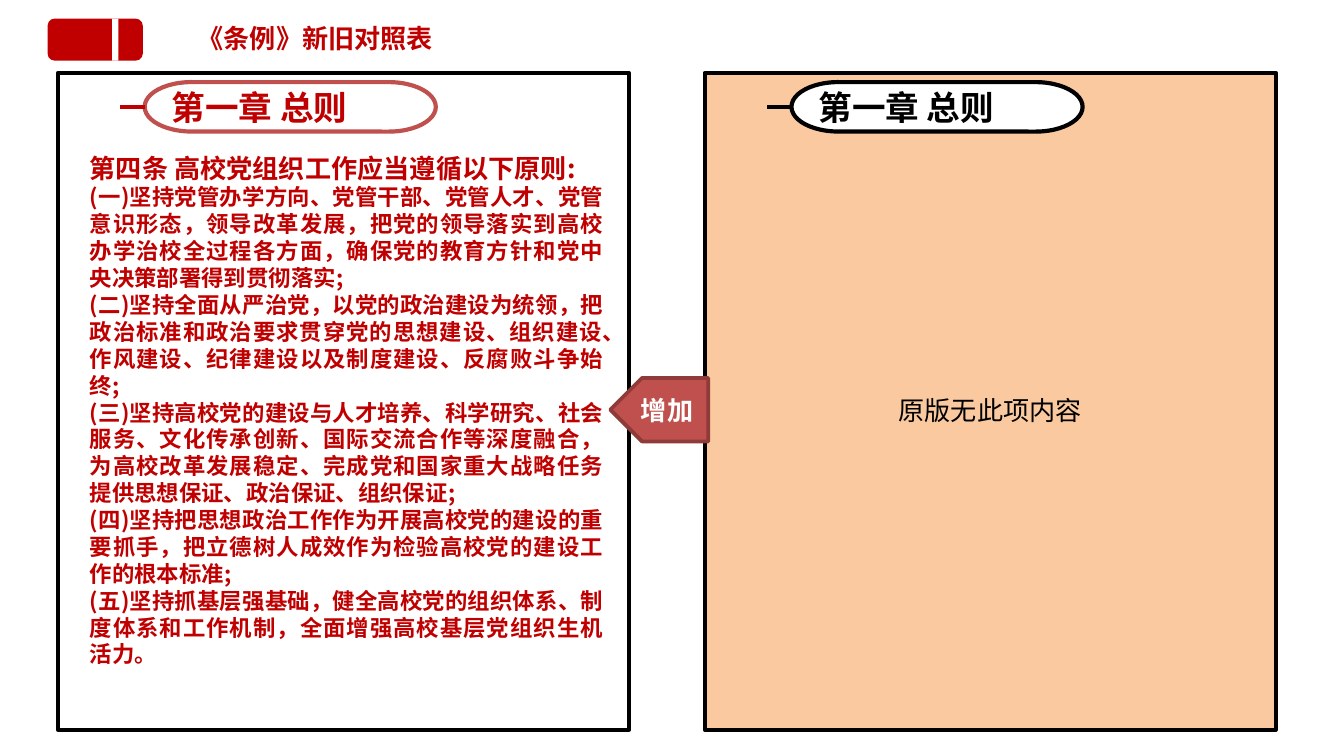
import lxml.etree
import pptx
import pptx.dml.color
import pptx.enum.shapes
import pptx.enum.text
import pptx.oxml.ns
import pptx.util

Pt = pptx.util.Pt
qn = pptx.oxml.ns.qn
SHAPE = pptx.enum.shapes.MSO_SHAPE
ALIGN = pptx.enum.text.PP_ALIGN
ANCHOR = pptx.enum.text.MSO_ANCHOR

COLORS = {"red": "C00000", "white": "FFFFFF", "black": "000000",
          "orange": "FAC090", "brick": "C0504D", "dark_brick": "8E3B39"}


class Deck:
    """Holds the style and the current slide."""
    font = "Noto Sans CJK SC"

    def __init__(self, slide):
        self.s = slide

    def rgb(self, name):
        return pptx.dml.color.RGBColor.from_string(COLORS[name])

    def shape(self, kind, x, y, w, h, fill, line=None, width=2, alpha=None):
        sp = self.s.shapes.add_shape(kind, Pt(x), Pt(y), Pt(w), Pt(h))
        sp.shadow.inherit = False
        sp.fill.solid()
        sp.fill.fore_color.rgb = self.rgb(fill)
        if alpha:
            clr = sp._element.spPr.find(qn("a:solidFill"))[0]
            lxml.etree.SubElement(clr, qn("a:alpha")).set("val", str(alpha * 1000))
        if line:
            sp.line.color.rgb = self.rgb(line)
            sp.line.width = Pt(width)
        else:
            sp.line.fill.background()
        return sp

    def set_text(self, sp, lines, sizes, color, bold=True, align=ALIGN.CENTER):
        tf = sp.text_frame
        tf.text = "\n".join(lines)
        for p, size in zip(tf.paragraphs, sizes):
            p.alignment = align
            for r in p.runs:
                r.font.name = self.font
                r.font.size = Pt(size)
                r.font.bold = bold
                r.font.color.rgb = self.rgb(color)
                ea = lxml.etree.SubElement(r._r.get_or_add_rPr(), qn("a:ea"))
                ea.set("typeface", self.font)

    def text(self, x, y, w, h, lines, sizes, color, wrap=True, **style):
        sp = self.s.shapes.add_textbox(Pt(x), Pt(y), Pt(w), Pt(h))
        sp.text_frame.word_wrap = wrap
        sp.text_frame.auto_size = pptx.enum.text.MSO_AUTO_SIZE.SHAPE_TO_FIT_TEXT
        self.set_text(sp, lines, sizes, color, **style)

    def label(self, sp, text, size, color, align=ALIGN.CENTER):
        sp.text_frame.vertical_anchor = ANCHOR.MIDDLE
        self.set_text(sp, [text], [size], color, align=align)

    def chapter(self, x, y, title, outline, color):
        w, h, stem = 156, 26.5, 13
        tag = self.shape(SHAPE.FLOWCHART_TERMINATOR, x, y, w, h, "white", outline, 2.25)
        self.label(tag, title, 18, color, ALIGN.LEFT)
        mid = Pt(y + h / 2)
        c = self.s.shapes.add_connector(
            pptx.enum.shapes.MSO_CONNECTOR.STRAIGHT, Pt(x - stem), mid, Pt(x), mid)
        c.end_connect(tag, 1)
        c.line.color.rgb = self.rgb(color)
        c.line.width = Pt(2.25)
        lxml.etree.SubElement(c._element.spPr, qn("a:effectLst"))


prs = pptx.Presentation()
prs.slide_width, prs.slide_height = Pt(720), Pt(405)
deck = Deck(prs.slides.add_slide(prs.slide_layouts[6]))

# Header
deck.shape(SHAPE.ROUNDED_RECTANGLE, 25.5, 10, 51, 22.5, "red")
deck.shape(SHAPE.RECTANGLE, 60, 10, 3.5, 22.5, "white")
deck.text(98, 8.5, 142, 24.5, ["《条例》新旧对照表"], [14], "red", wrap=False)

# Panels with chapter tags: new version left, old version right
PANELS = [(31, "white", "brick", "red"), (377.5, "orange", "black", "black")]
for x, fill, outline, color in PANELS:
    deck.shape(SHAPE.RECTANGLE, x, 39, 306, 352, fill, "black", alpha=85)
    deck.chapter(x + 46.5, 44, "第一章 总则", outline, color)

# New article
article = [
    "第四条 高校党组织工作应当遵循以下原则:",
    "(一)坚持党管办学方向、党管干部、党管人才、党管意识形态，领导改革发展，"
    "把党的领导落实到高校办学治校全过程各方面，确保党的教育方针和党中央决策部署得到贯彻落实;",
    "(二)坚持全面从严治党，以党的政治建设为统领，把政治标准和政治要求贯穿党的思想建设、"
    "组织建设、作风建设、纪律建设以及制度建设、反腐败斗争始终;",
    "(三)坚持高校党的建设与人才培养、科学研究、社会服务、文化传承创新、国际交流合作等深度融合，"
    "为高校改革发展稳定、完成党和国家重大战略任务提供思想保证、政治保证、组织保证;",
    "(四)坚持把思想政治工作作为开展高校党的建设的重要抓手，"
    "把立德树人成效作为检验高校党的建设工作的根本标准;",
    "(五)坚持抓基层强基础，健全高校党的组织体系、制度体系和工作机制，"
    "全面增强高校基层党组织生机活力。",
]
deck.text(41, 78, 289.5, 283.5, article, [14] + [12] * 5, "red", align=ALIGN.JUSTIFY)

# Old version
deck.text(384, 207.5, 293, 24.5, ["原版无此项内容"], [14], "black", bold=False)

# Arrow pointing to the new version
arrow = deck.shape(SHAPE.PENTAGON, 327, 202.5, 52.5, 34, "brick", "dark_brick")
arrow._element.spPr.find(qn("a:xfrm")).set("flipH", "1")
deck.label(arrow, "增加", 14, "white")

prs.save("out.pptx")
